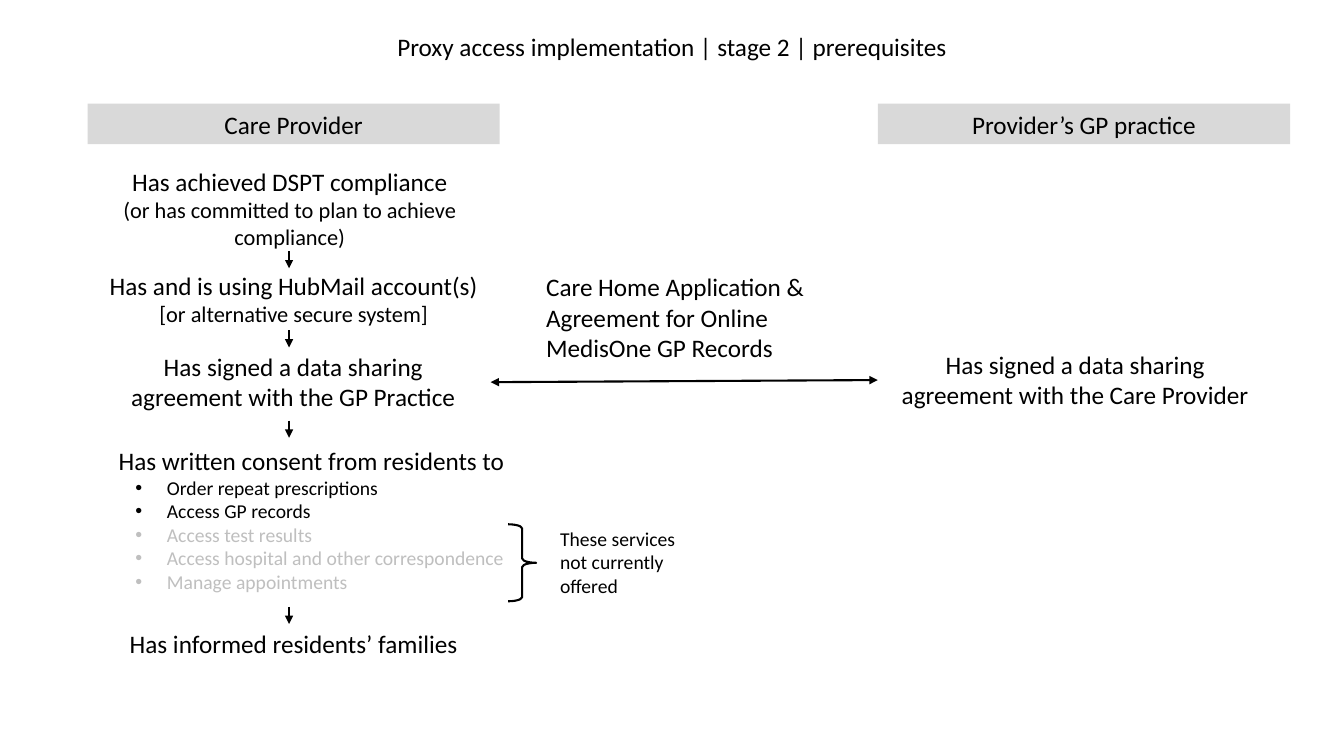
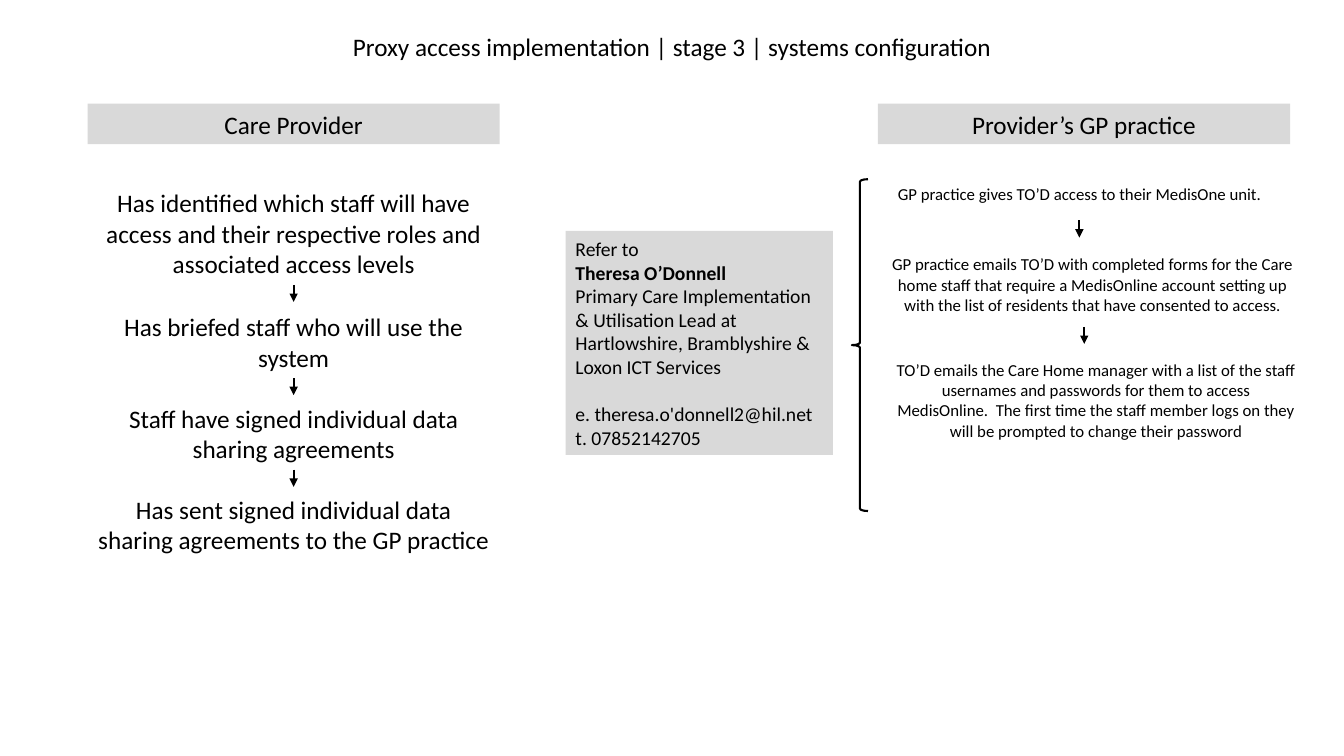
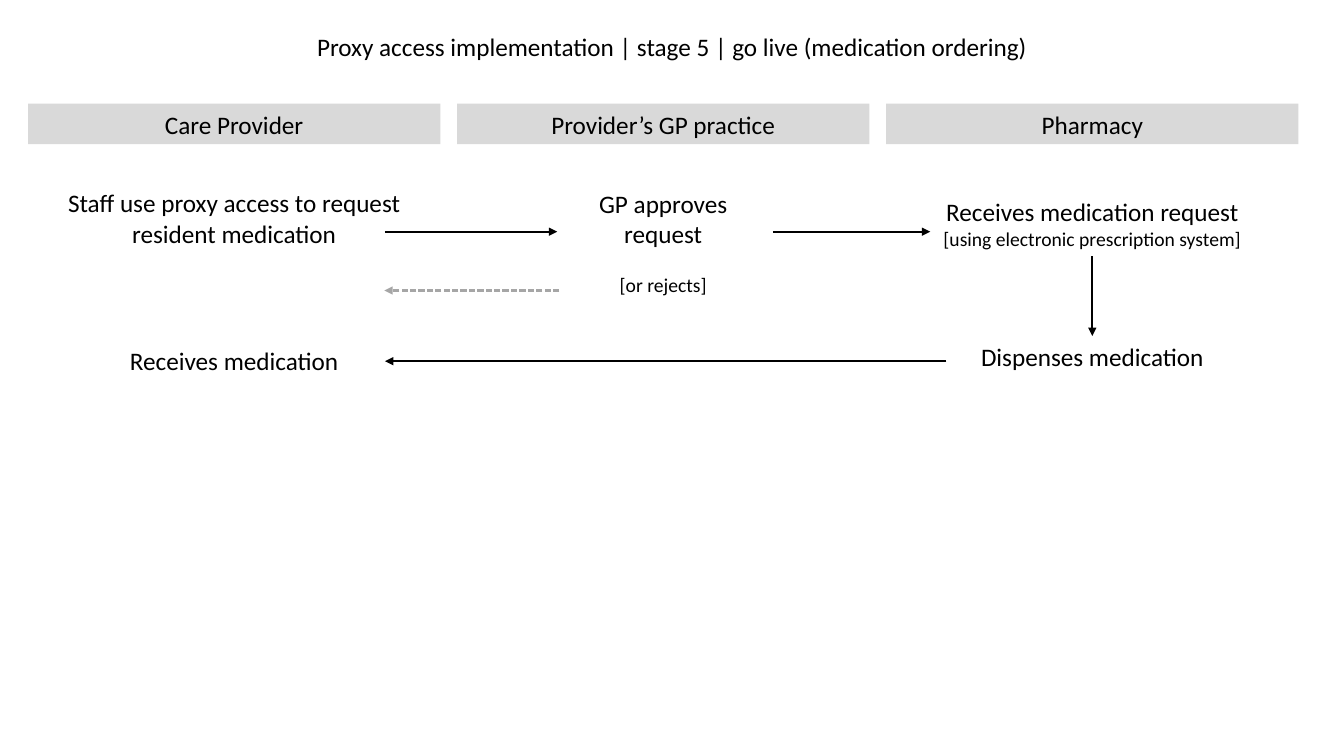
import dataclasses

import lxml.etree
import pptx
import pptx.dml.color
import pptx.enum.dml
import pptx.enum.shapes
import pptx.enum.text
import pptx.oxml.ns
import pptx.util

Pt = pptx.util.Pt
RGBColor = pptx.dml.color.RGBColor
ALIGN = pptx.enum.text.PP_ALIGN
ANCHOR = pptx.enum.text.MSO_ANCHOR
SHAPE = pptx.enum.shapes.MSO_SHAPE
qn = pptx.oxml.ns.qn


@dataclasses.dataclass(frozen=True)
class Theme:
    font: str = "Calibri"
    ink: RGBColor = RGBColor(0, 0, 0)
    band: RGBColor = RGBColor(0xD9, 0xD9, 0xD9)
    unavailable: RGBColor = RGBColor(0xBF, 0xBF, 0xBF)
    rejected: RGBColor = RGBColor(0xA6, 0xA6, 0xA6)
    main: int = 18
    aside: int = 16
    note: int = 14
    small: int = 12
    line: float = 1.5


theme = Theme()
band_width = 294.5
short_arrow = 12.2


def add_text(slide, box, lines, alignment=ALIGN.CENTER, fill=None):
    left, top, width, height = map(Pt, box)
    if fill is None:
        shape = slide.shapes.add_textbox(left, top, width, height)
    else:
        shape = slide.shapes.add_shape(SHAPE.RECTANGLE, left, top, width, height)
        shape.shadow.inherit = False
        shape.fill.solid()
        shape.fill.fore_color.rgb = fill
        shape.line.fill.background()
    frame = shape.text_frame
    frame.word_wrap = True
    frame.text = "\n".join(text for text, size in lines)
    for paragraph, (text, size) in zip(frame.paragraphs, lines):
        paragraph.alignment = alignment
        paragraph.font.name = theme.font
        paragraph.font.size = Pt(size)
        paragraph.font.color.rgb = theme.ink
    return shape


def add_arrow(slide, start, end, color=theme.ink, ends=("tailEnd",), dash=None):
    connector = slide.shapes.add_connector(
        pptx.enum.shapes.MSO_CONNECTOR.STRAIGHT, *map(Pt, start + end)
    )
    connector.line.width = Pt(theme.line)
    connector.line.color.rgb = color
    if dash is not None:
        connector.line.dash_style = dash
    properties = connector.element.spPr
    for name in ends:
        lxml.etree.SubElement(properties.find(qn("a:ln")), qn(f"a:{name}"), type="triangle")
    lxml.etree.SubElement(properties, qn("a:effectLst"))
    return connector


presentation = pptx.Presentation()
presentation.slide_width = Pt(960)
presentation.slide_height = Pt(540)

two_bands = [(62.5, "Care Provider"), (627, "Provider’s GP practice")]
three_bands = [
    (20 + 306.5 * column, name)
    for column, name in enumerate(["Care Provider", "Provider’s GP practice", "Pharmacy"])
]
slides = []
for layout, stage, bands in [
    (1, "stage 2 | prerequisites", two_bands),
    (5, "stage 3 | systems configuration", two_bands),
    (5, "stage 5 | go live (medication ordering)", three_bands),
]:
    slide = presentation.slides.add_slide(presentation.slide_layouts[layout])
    slides.append(slide)
    title = slide.shapes.title
    title.left, title.top, title.width, title.height = map(Pt, (0, 19, 960, 29))
    title.text_frame.text = f"Proxy access implementation | {stage}"
    title.text_frame.auto_size = pptx.enum.text.MSO_AUTO_SIZE.NONE
    title.text_frame.vertical_anchor = ANCHOR.MIDDLE
    paragraph = title.text_frame.paragraphs[0]
    paragraph.alignment = ALIGN.CENTER
    paragraph.font.name = theme.font
    paragraph.font.size = Pt(theme.main)
    paragraph.font.color.rgb = theme.ink
    for left, name in bands:
        add_text(slide, (left, 74, band_width, 29), [(name, theme.main)], fill=theme.band)

prerequisites, configuration, go_live = slides

add_text(prerequisites, (57, 115, 300, 68), [
    ("Has achieved DSPT compliance", theme.main),
    ("(or has committed to plan to achieve compliance)", theme.aside),
])
add_text(prerequisites, (62.5, 189.5, band_width, 48), [
    ("Has and is using HubMail account(s)", theme.main),
    ("[or alternative secure system]", theme.aside),
])
provider_agreement = add_text(prerequisites, (68.5, 247.5, 282, 51), [
    ("Has signed a data sharing agreement with the GP Practice", theme.main),
])
practice_agreement = add_text(prerequisites, (627, 246, 282, 51), [
    ("Has signed a data sharing agreement with the Care Provider", theme.main),
])
add_text(prerequisites, (62.5, 445.5, band_width, 29), [
    ("Has informed residents’ families", theme.main),
])
add_text(prerequisites, (393, 372.5, 107, 58), [
    ("These services not currently offered", theme.note),
], ALIGN.LEFT)
add_text(prerequisites, (383, 190.5, 214, 73), [
    ("Care Home Application & Agreement for Online MedisOne GP Records", theme.main),
], ALIGN.LEFT)

consent = prerequisites.placeholders[1]
consent.left, consent.top, consent.width, consent.height = map(Pt, (62.5, 314.5, 320, 114))
frame = consent.text_frame
frame.auto_size = pptx.enum.text.MSO_AUTO_SIZE.NONE
services = [
    ("Order repeat prescriptions", theme.ink),
    ("Access GP records", theme.ink),
    ("Access test results", theme.unavailable),
    ("Access hospital and other correspondence", theme.unavailable),
    ("Manage appointments", theme.unavailable),
]
frame.text = "\n".join(["Has written consent from residents to"] + [name for name, color in services])
for paragraph in frame.paragraphs:
    paragraph.space_before = Pt(0)
    paragraph.font.name = theme.font
heading, *items = frame.paragraphs
heading.alignment = ALIGN.CENTER
heading.font.size = Pt(theme.main)
heading.font.color.rgb = theme.ink
properties = heading._p.get_or_add_pPr()
properties.set("marL", "0")
properties.set("indent", "0")
properties.insert_element_before(lxml.etree.Element(qn("a:buNone")), "a:defRPr")
for paragraph, (name, color) in zip(items, services):
    paragraph.font.size = Pt(theme.note)
    paragraph.font.color.rgb = color
    properties = paragraph._p.get_or_add_pPr()
    properties.set("marL", str(Pt(49.5)))
    properties.set("indent", str(Pt(-22.5)))

agreement_link = add_arrow(
    prerequisites, (350.5, 273), (627, 271.5), ends=("headEnd", "tailEnd")
)
agreement_link.begin_connect(provider_agreement, 3)
agreement_link.end_connect(practice_agreement, 1)
for top in (179.5, 236, 300.5, 433.5):
    add_arrow(prerequisites, (206.5, top), (206.5, top + short_arrow))

provider_steps = [
    (130.5, 73, "Has identified which staff will have access and their respective roles and associated access levels"),
    (219, 51, "Has briefed staff who will use the system"),
    (284.5, 51, "Staff have signed individual data sharing agreements"),
    (349.5, 51, "Has sent signed individual data sharing agreements to the GP practice"),
]
step_center = 62.5 + band_width / 2
for number, (top, height, text) in enumerate(provider_steps, 1):
    step = add_text(configuration, (62.5, top, band_width, height), [(text, theme.main)])
    if number < len(provider_steps):
        bottom = top + height
        arrow = add_arrow(configuration, (step_center, bottom), (step_center, bottom + short_arrow))
        arrow.begin_connect(step, 2)

for box, text in [
    ((624, 128, band_width, 22), "GP practice gives TO’D access to their MedisOne unit."),
    ((627, 178, 307, 51), "GP practice emails TO’D with completed forms for the Care home staff that require a MedisOnline account setting up with the list of residents that have consented to access."),
    ((633, 253.5, 300, 65.5), "TO’D emails the Care Home manager with a list of the staff usernames and passwords for them to access MedisOnline.  The first time the staff member logs on they will be prompted to change their password"),
]:
    add_text(configuration, box, [(text, theme.small)])
for center, top in [(771, 157.5), (774.5, 233.5)]:
    add_arrow(configuration, (center, top), (center, top + short_arrow))

contact = add_text(configuration, (404, 165, 191, 160), [
    ("Refer to", theme.note),
    ("Theresa O’Donnell", theme.note),
    ("Primary Care Implementation & Utilisation Lead at Hartlowshire, Bramblyshire & Loxon ICT Services", theme.note),
    ("e. theresa.o'donnell2@hil.net", theme.note),
    ("t. 07852142705", theme.note),
], ALIGN.LEFT, theme.band)
contact.text_frame.paragraphs[1].font.bold = True
contact.text_frame.paragraphs[3].space_before = Pt(17)

add_text(go_live, (20, 130.5, band_width, 51), [
    ("Staff use proxy access to request resident medication", theme.main),
])
approval = add_text(go_live, (326.5, 131, band_width, 85), [
    ("GP approves", theme.main),
    ("request", theme.main),
    ("[or rejects]", theme.note),
])
approval.text_frame.paragraphs[2].space_before = Pt(17)
request = add_text(go_live, (633, 137, band_width, 46), [
    ("Receives medication request", theme.main),
    ("[using electronic prescription system]", theme.note),
])
dispensing = add_text(go_live, (633, 240, band_width, 29), [("Dispenses medication", theme.main)])
add_text(go_live, (20, 243, band_width, 29), [("Receives medication", theme.main)])

for start, end in [((275, 165.5), (398, 165.5)), ((552, 165.5), (664.5, 165.5)), ((676, 258), (275, 258))]:
    add_arrow(go_live, start, end)
dispense_arrow = add_arrow(go_live, (780, 183), (780, 240))
dispense_arrow.begin_connect(request, 2)
dispense_arrow.end_connect(dispensing, 0)
add_arrow(
    go_live, (399.5, 207.5), (274.5, 207.5), theme.rejected,
    dash=pptx.enum.dml.MSO_LINE.SQUARE_DOT,
)

for slide, outline, box in [
    (prerequisites, SHAPE.RIGHT_BRACE, (363, 374.5, 20, 55)),
    (configuration, SHAPE.LEFT_BRACE, (608.5, 128, 11.5, 237)),
]:
    brace = slide.shapes.add_shape(outline, *map(Pt, box))
    brace.shadow.inherit = False
    brace.fill.background()
    brace.line.color.rgb = theme.ink
    brace.line.width = Pt(theme.line)
    brace.adjustments[0] = 0.15

presentation.save("out.pptx")
